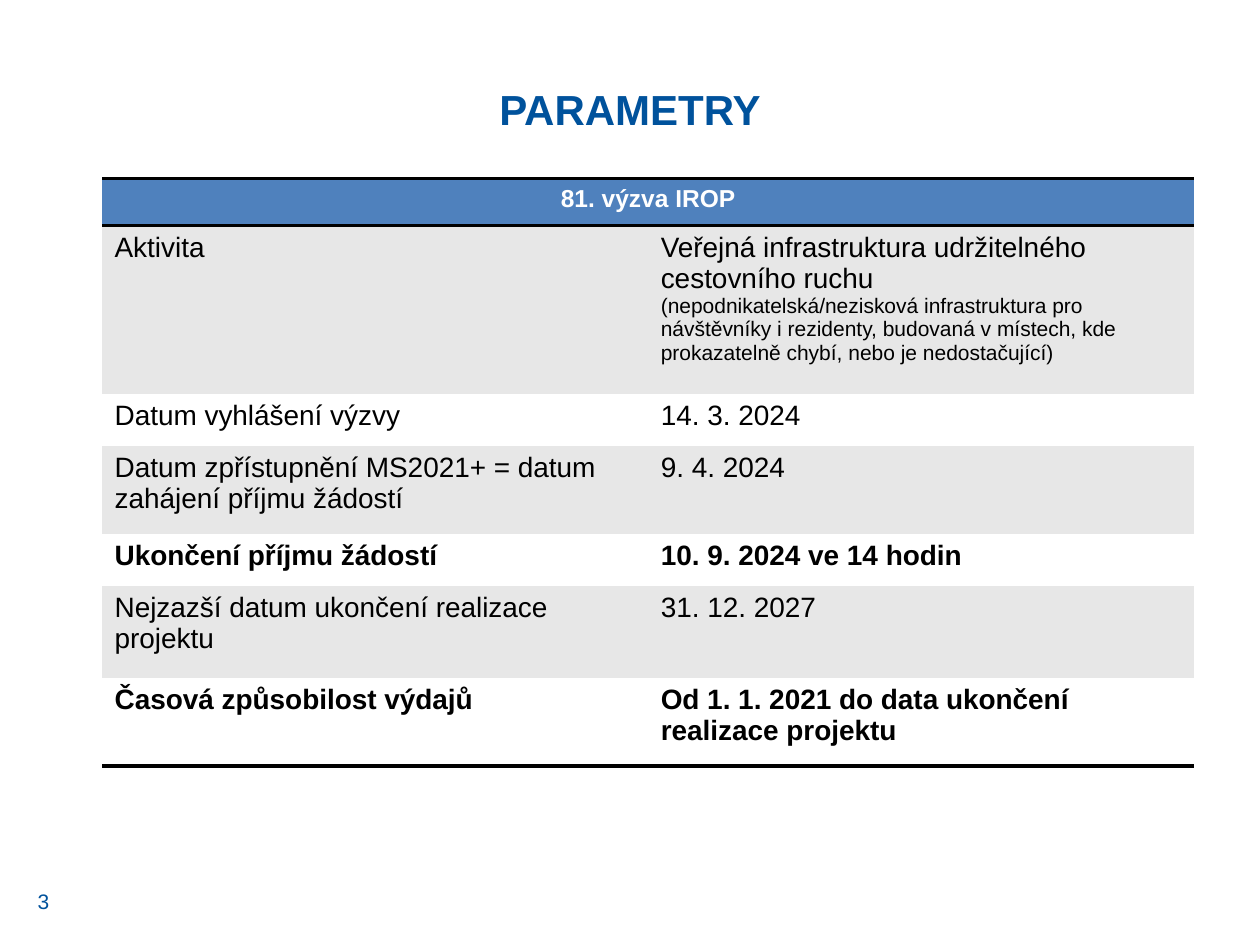
import lxml.etree
import pptx
import pptx.dml.color
import pptx.enum.text
import pptx.oxml.ns
import pptx.util

HEADING = "PARAMETRY"
PAGE_NUMBER = "3"
CALL_NAME = "81. výzva IROP"
PARAMETERS = [
    ("Aktivita", ["Veřejná infrastruktura udržitelného cestovního ruchu",
                  "(nepodnikatelská/nezisková infrastruktura pro návštěvníky i rezidenty, "
                  "budovaná v místech, kde prokazatelně chybí, nebo je nedostačující)"], False),
    ("Datum vyhlášení výzvy", ["14. 3. 2024"], False),
    ("Datum zpřístupnění MS2021+ = datum zahájení příjmu žádostí", ["9. 4. 2024"], False),
    ("Ukončení příjmu žádostí", ["10. 9. 2024 ve 14 hodin"], True),
    ("Nejzazší datum ukončení realizace projektu", ["31. 12. 2027"], False),
    ("Časová způsobilost výdajů", ["Od 1. 1. 2021 do data ukončení realizace projektu"], True),
]

THEME = {
    "font": "Arial",
    "accent": "00529C", "ink": "000000", "header_text": "FFFFFF",
    "header": "4F81BD", "bands": ("E7E7E7", "FFFFFF"),
    "heading_size": 24, "header_size": 14, "body_size": 16, "small_size": 12,
    "rule_width": 2,
}
SLIDE_SIZE = (10, 7.5)
HEADING_BOX = (1.06, 0.61, 7.88, 0.59)
NUMBER_BOX = (0.2, 6.95, 0.55, 0.4)
TABLE_LEFT, TABLE_TOP, TABLE_WIDTH = 0.81, 1.42, 8.67
ROW_HEIGHTS = (0.37, 1.34, 0.41, 0.7, 0.41, 0.73, 0.7)
PLAIN_TABLE_STYLE = "{2D5ABB26-0587-4C30-8999-92F81FD0307C}"

CENTER = pptx.enum.text.PP_ALIGN.CENTER
LEFT = pptx.enum.text.PP_ALIGN.LEFT


def inches(lengths):
    return [pptx.util.Inches(length) for length in lengths]


def color(code):
    return pptx.dml.color.RGBColor.from_string(code)


def write(paragraph, words, size, ink, bold=False, align=LEFT):
    paragraph.alignment = align
    run = paragraph.add_run()
    run.text = words
    run.font.name = THEME["font"]
    run.font.size = pptx.util.Pt(size)
    run.font.bold = bold
    run.font.color.rgb = color(ink)


def add_label(slide, box, words, size, anchor, **style):
    frame = slide.shapes.add_textbox(*inches(box)).text_frame
    frame.word_wrap = True
    frame.vertical_anchor = anchor
    write(frame.paragraphs[0], words, size, THEME["accent"], **style)


def dress(cell, fill, rules=()):
    properties = cell._tc.get_or_add_tcPr()
    qn = pptx.oxml.ns.qn
    for side in rules:
        width = pptx.util.Pt(THEME["rule_width"])
        rule = lxml.etree.SubElement(properties, qn(f"a:ln{side}"), w=str(width))
        solid = lxml.etree.SubElement(rule, qn("a:solidFill"))
        lxml.etree.SubElement(solid, qn("a:srgbClr"), val=THEME["ink"])
    cell.fill.solid()
    cell.fill.fore_color.rgb = color(fill)


def add_parameters(slide):
    size = (TABLE_WIDTH, sum(ROW_HEIGHTS))
    frame = slide.shapes.add_table(len(ROW_HEIGHTS), 2, *inches((TABLE_LEFT, TABLE_TOP, *size)))
    table = frame.table
    table.first_row = table.horz_banding = False
    table._tbl.tblPr.find(pptx.oxml.ns.qn("a:tableStyleId")).text = PLAIN_TABLE_STYLE
    for row, height in zip(table.rows, ROW_HEIGHTS):
        row.height = pptx.util.Inches(height)

    header = table.cell(0, 0)
    header.merge(table.cell(0, 1))
    for cell in table.rows[0].cells:
        dress(cell, THEME["header"], "TB")
    write(header.text_frame.paragraphs[0], CALL_NAME, THEME["header_size"],
          THEME["header_text"], bold=True, align=CENTER)

    for number, (parameter, values, bold) in enumerate(PARAMETERS, 1):
        rules = "B" if number == len(PARAMETERS) else ""
        for cell, lines in zip(table.rows[number].cells, ([parameter], values)):
            dress(cell, THEME["bands"][(number - 1) % 2], rules)
            for index, line in enumerate(lines):
                text = cell.text_frame
                paragraph = text.add_paragraph() if index else text.paragraphs[0]
                line_size = THEME["small_size" if index else "body_size"]
                write(paragraph, line, line_size, THEME["ink"], bold)


def main():
    deck = pptx.Presentation()
    deck.slide_width, deck.slide_height = inches(SLIDE_SIZE)
    slide = deck.slides.add_slide(deck.slide_layouts[6])
    anchors = pptx.enum.text.MSO_ANCHOR
    add_label(slide, HEADING_BOX, HEADING, THEME["heading_size"], anchors.TOP,
              bold=True, align=CENTER)
    add_label(slide, NUMBER_BOX, PAGE_NUMBER, THEME["small_size"], anchors.MIDDLE)
    add_parameters(slide)
    deck.save("out.pptx")


if __name__ == "__main__":
    main()
